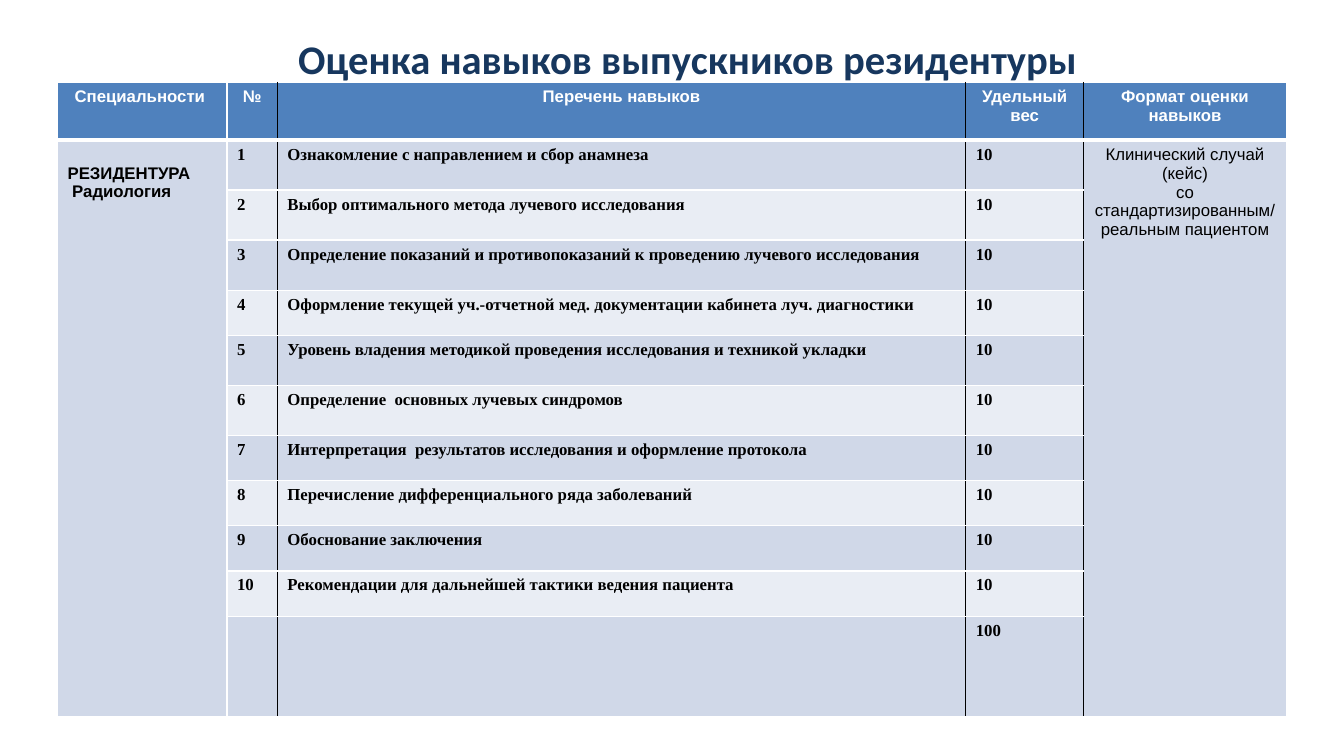
"""Build the slide on assessing the skills of residency graduates."""
from dataclasses import dataclass

from lxml.etree import SubElement
from pptx import Presentation
from pptx.dml.color import RGBColor
from pptx.enum.text import PP_ALIGN
from pptx.oxml.ns import qn
from pptx.slide import Slide
from pptx.table import Table, _Cell
from pptx.text.text import _Paragraph
from pptx.util import Cm, Pt

HUES = {
    "title": "17375E",
    "head": "4F81BD",
    "odd": "D0D8E8",
    "even": "E9EDF4",
    "white": "FFFFFF",
    "black": "000000",
}


@dataclass(frozen=True)
class Style:
    """Look of a run of text."""
    font: str
    size: float = 12
    hue: str = "black"
    bold: bool = True
    align: PP_ALIGN = PP_ALIGN.LEFT


@dataclass(frozen=True)
class Column:
    """Heading, width in cm and side border hues of a table column."""
    head: str
    width: float
    left: str
    right: str


@dataclass(frozen=True)
class Skill:
    """One numbered skill, its weight and row height in cm."""
    mark: str
    name: str
    weight: str
    height: float


TITLE = Style("Calibri", 29, "title", align=PP_ALIGN.CENTER)
HEAD = Style("Arial", hue="white", align=PP_ALIGN.CENTER)
FIELD = Style("Arial")
FORM = Style("Arial", bold=False, align=PP_ALIGN.CENTER)
BODY = Style("Times New Roman")

COLUMNS = [
    Column("Специальности ", 4.27, "white", "white"),
    Column("№", 1.27, "white", "black"),
    Column("Перечень навыков", 17.35, "black", "black"),
    Column("Удельный вес", 2.97, "black", "black"),
    Column("Формат оценки навыков", 5.11, "black", "white"),
]
TALL, LOW = 1.26, 1.14
SKILLS = [
    Skill("1", "Ознакомление с направлением и сбор анамнеза", "10", TALL),
    Skill("2", "Выбор оптимального метода лучевого исследования", "10", TALL),
    Skill("3", "Определение показаний и противопоказаний к проведению лучевого исследования", "10", TALL),
    Skill("4", "Оформление текущей уч.-отчетной мед. документации кабинета луч. диагностики", "10", LOW),
    Skill("5", "Уровень владения методикой проведения исследования и техникой укладки", "10", TALL),
    Skill("6", "Определение  основных лучевых синдромов", "10", TALL),
    Skill("7", "Интерпретация  результатов исследования и оформление протокола", "10", LOW),
    Skill("8", "Перечисление дифференциального ряда заболеваний", "10", LOW),
    Skill("9", "Обоснование заключения", "10", LOW),
    Skill("10", "Рекомендации для дальнейшей тактики ведения пациента", "10", LOW),
    Skill("", "", "100", 2.54),
]
FIELDS = ["РЕЗИДЕНТУРА", " Радиология"]
FORMS = ["Клинический случай (кейс)", "со стандартизированным/", "реальным пациентом"]


def write(para: _Paragraph, text: str, style: Style) -> None:
    """Add one styled run to a paragraph."""
    para.alignment = style.align
    run = para.add_run()
    run.text = text
    run.font.name = style.font
    run.font.size = Pt(style.size)
    run.font.bold = style.bold
    run.font.color.rgb = RGBColor.from_string(HUES[style.hue])


def fill(cell: _Cell, lines: list[str], style: Style) -> None:
    """Write each line as a paragraph of a cell."""
    frame = cell.text_frame
    for i, line in enumerate(lines):
        para = frame.add_paragraph() if i else frame.paragraphs[0]
        if line:
            write(para, line, style)


def paint(cell: _Cell, column: Column, hue: str, base: float) -> None:
    """Give a cell its borders and background."""
    props = cell._tc.get_or_add_tcPr()
    edges = [("L", column.left, 1), ("R", column.right, 1), ("T", "white", 1), ("B", "white", base)]
    for side, tone, width in edges:
        line = SubElement(props, qn(f"a:ln{side}"), w=str(Pt(width)))
        solid = SubElement(line, qn("a:solidFill"))
        SubElement(solid, qn("a:srgbClr"), val=HUES[tone])
    cell.fill.solid()
    cell.fill.fore_color.rgb = RGBColor.from_string(HUES[hue])


def merge(table: Table, col: int, lines: list[str], style: Style) -> _Cell:
    """Join a column below its heading and write in it."""
    cell = table.cell(1, col)
    cell.merge(table.cell(len(SKILLS), col))
    fill(cell, lines, style)
    return cell


def add_title(slide: Slide) -> None:
    """Place the slide title."""
    box = slide.shapes.add_textbox(Cm(1.45), Cm(0.82), Cm(31.78), Cm(1.3))
    frame = box.text_frame
    frame.word_wrap = True
    frame.margin_left = frame.margin_right = frame.margin_bottom = 0
    frame.margin_top = Cm(0.03)
    write(frame.paragraphs[0], "Оценка навыков выпускников резидентуры", TITLE)


def add_grid(slide: Slide) -> None:
    """Place the table of skills."""
    heights = [1.45] + [skill.height for skill in SKILLS]
    width = sum(column.width for column in COLUMNS)
    table = slide.shapes.add_table(
        len(heights), len(COLUMNS), Cm(1.45), Cm(2.08), Cm(width), Cm(sum(heights))
    ).table
    table.horz_banding = False
    for r, height in enumerate(heights):
        table.rows[r].height = Cm(height)
        hue = ("odd" if r % 2 else "even") if r else "head"
        for c, column in enumerate(COLUMNS):
            paint(table.cell(r, c), column, hue, 1 if r else 3)
    for c, column in enumerate(COLUMNS):
        table.columns[c].width = Cm(column.width)
        fill(table.cell(0, c), [column.head], HEAD)
    for r, skill in enumerate(SKILLS, 1):
        for c, text in enumerate([skill.mark, skill.name, skill.weight], 1):
            fill(table.cell(r, c), [text], BODY)
    merge(table, 0, FIELDS, FIELD).margin_top = Cm(0.6)
    merge(table, 4, FORMS, FORM)


def main() -> None:
    """Build and save the slide."""
    deck = Presentation()
    deck.slide_width, deck.slide_height = Cm(33.87), Cm(19.05)
    slide = deck.slides.add_slide(deck.slide_layouts[6])
    add_title(slide)
    add_grid(slide)
    deck.save("out.pptx")


if __name__ == "__main__":
    main()
